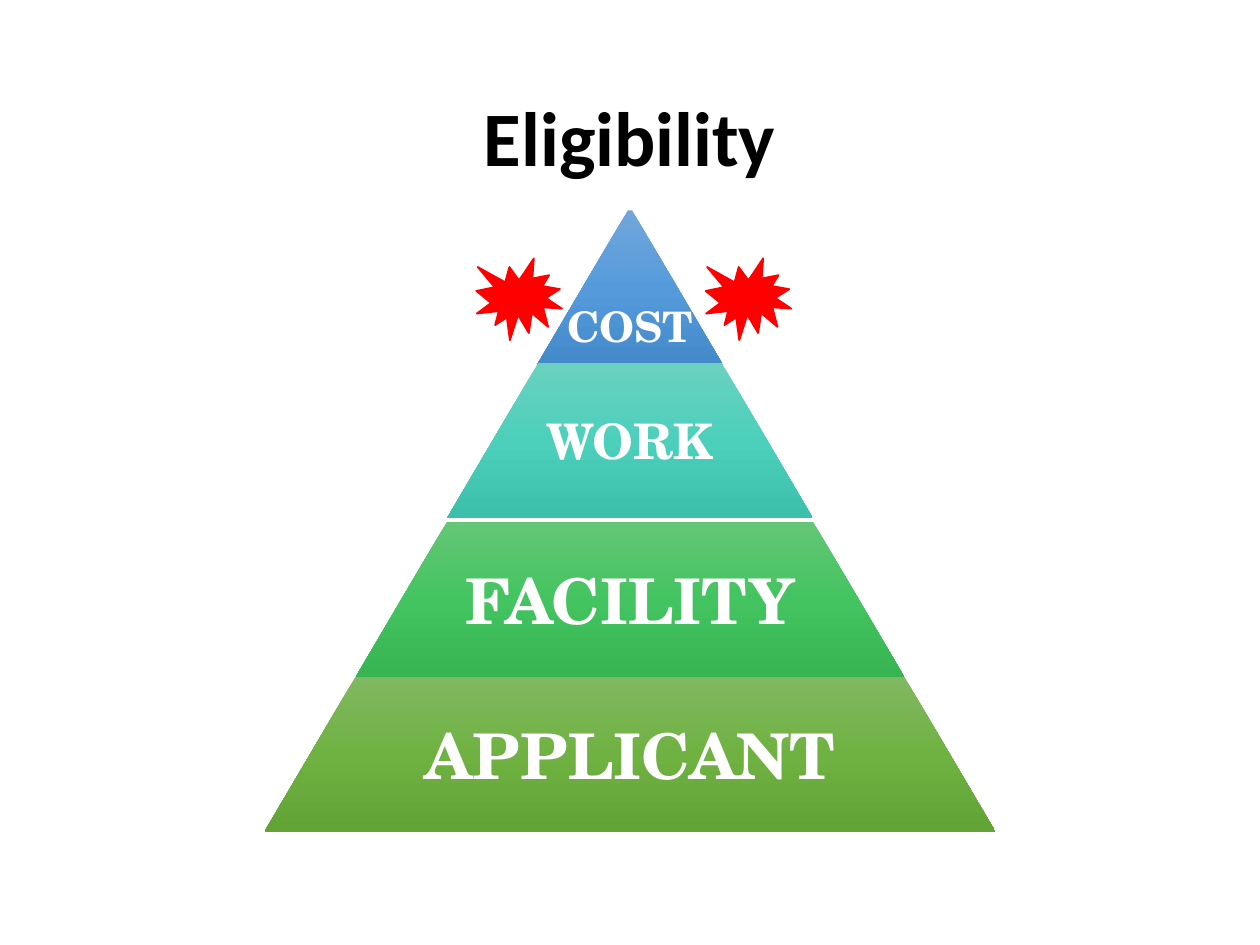
from copy import deepcopy
from dataclasses import dataclass

from pptx import Presentation
from pptx.dml.color import RGBColor
from pptx.enum.shapes import MSO_SHAPE as Preset
from pptx.enum.text import MSO_ANCHOR as Anchor, PP_ALIGN as Align
from pptx.oxml.ns import qn
from pptx.util import Inches, Pt


@dataclass(frozen=True)
class Theme:
    title_font: str = "Calibri"
    label_font: str = "TeX Gyre Schola"
    title_color: str = "000000"
    label_color: str = "FFFFFF"
    burst_color: str = "FF0000"
    title_size: int = 44
    cost_size: int = 24
    work_size: int = 28
    base_size: int = 36
    blue: tuple = ("71A6DB", "559BDB", "448ACA")
    teal: tuple = ("6AD1C0", "4CD0BC", "3CC0AC")
    green: tuple = ("64C677", "44C460", "36B552")
    olive: tuple = ("81B861", "6FB242", "62A336")


THEME = Theme()
TIER_HEIGHT = 1.23
TIER_SLOPE = 0.588
LABEL_SHARE = 0.65  # label width as a share of its tier

# Label, text size, gradient, top, width, drop of the label's top edge
TIERS = [
    ("COST", THEME.cost_size, THEME.blue, 1.67, 1.48, 0.6),
    ("WORK", THEME.work_size, THEME.teal, 2.88, 2.9, 0),
    ("FACILITY", THEME.base_size, THEME.green, 4.14, 4.35, 0),
    ("APPLICANT", THEME.base_size, THEME.olive, 5.37, 5.8, 0),
]


def add_text(slide, box, text, font_name, size, color, inset, line_spacing=1.0):
    shape = slide.shapes.add_textbox(*map(Inches, box))
    frame = shape.text_frame
    frame.word_wrap = True
    frame.vertical_anchor = Anchor.MIDDLE
    frame.margin_left = frame.margin_right = Inches(inset)
    frame.margin_top = frame.margin_bottom = Inches(0.05)
    paragraph = frame.paragraphs[0]
    paragraph.alignment = Align.CENTER
    paragraph.line_spacing = line_spacing
    run = paragraph.add_run()
    run.text = text
    run.font.name = font_name
    run.font.size = Pt(size)
    run.font.bold = True
    run.font.color.rgb = RGBColor.from_string(color)


def fill_gradient(shape, colors):
    """Fill from top to bottom with evenly spaced colours."""
    shape.fill.gradient()
    shape.fill.gradient_angle = 270
    stop_list = shape._element.spPr.find(".//" + qn("a:gsLst"))
    while len(stop_list) < len(colors):
        stop_list.append(deepcopy(stop_list[0]))
    for index, (stop, color) in enumerate(zip(shape.fill.gradient_stops, colors)):
        stop.position = index / (len(colors) - 1)
        stop.color.rgb = RGBColor.from_string(color)


def add_tier(slide, box, label, size, colors, drop):
    left, top, width, height = box
    shape = slide.shapes.add_shape(Preset.TRAPEZOID, *map(Inches, box))
    shape.adjustments[0] = TIER_SLOPE
    shape.shadow.inherit = False
    shape.line.fill.background()
    fill_gradient(shape, colors)
    label_width = max(width * LABEL_SHARE, TIERS[0][4])
    label_left = left + (width - label_width) / 2
    add_text(slide, (label_left, top + drop, label_width, height - drop),
             label, THEME.label_font, size, THEME.label_color, 0.05)


def add_pyramid(slide, center):
    for label, size, colors, top, width, drop in TIERS:
        box = (center - width / 2, top, width, TIER_HEIGHT)
        add_tier(slide, box, label, size, colors, drop)


def add_burst(slide, box):
    shape = slide.shapes.add_shape(Preset.EXPLOSION1, *map(Inches, box))
    shape.shadow.inherit = False
    color = RGBColor.from_string(THEME.burst_color)
    shape.fill.solid()
    shape.fill.fore_color.rgb = color
    shape.line.color.rgb = color
    shape.line.width = Pt(1)


def main():
    presentation = Presentation()
    presentation.slide_width = Inches(10)
    presentation.slide_height = Inches(7.5)
    slide = presentation.slides.add_slide(presentation.slide_layouts[6])

    # Title
    add_text(slide, (0.69, 0.4, 8.62, 1.45), "Eligibility", THEME.title_font,
             THEME.title_size, THEME.title_color, 0.1, line_spacing=0.9)

    # Pyramid of four tiers
    add_pyramid(slide, center=5)

    # Bursts on either side of the top tier
    for left in (3.78, 5.6):
        add_burst(slide, (left, 2.05, 0.68, 0.65))

    presentation.save("out.pptx")


if __name__ == "__main__":
    main()
